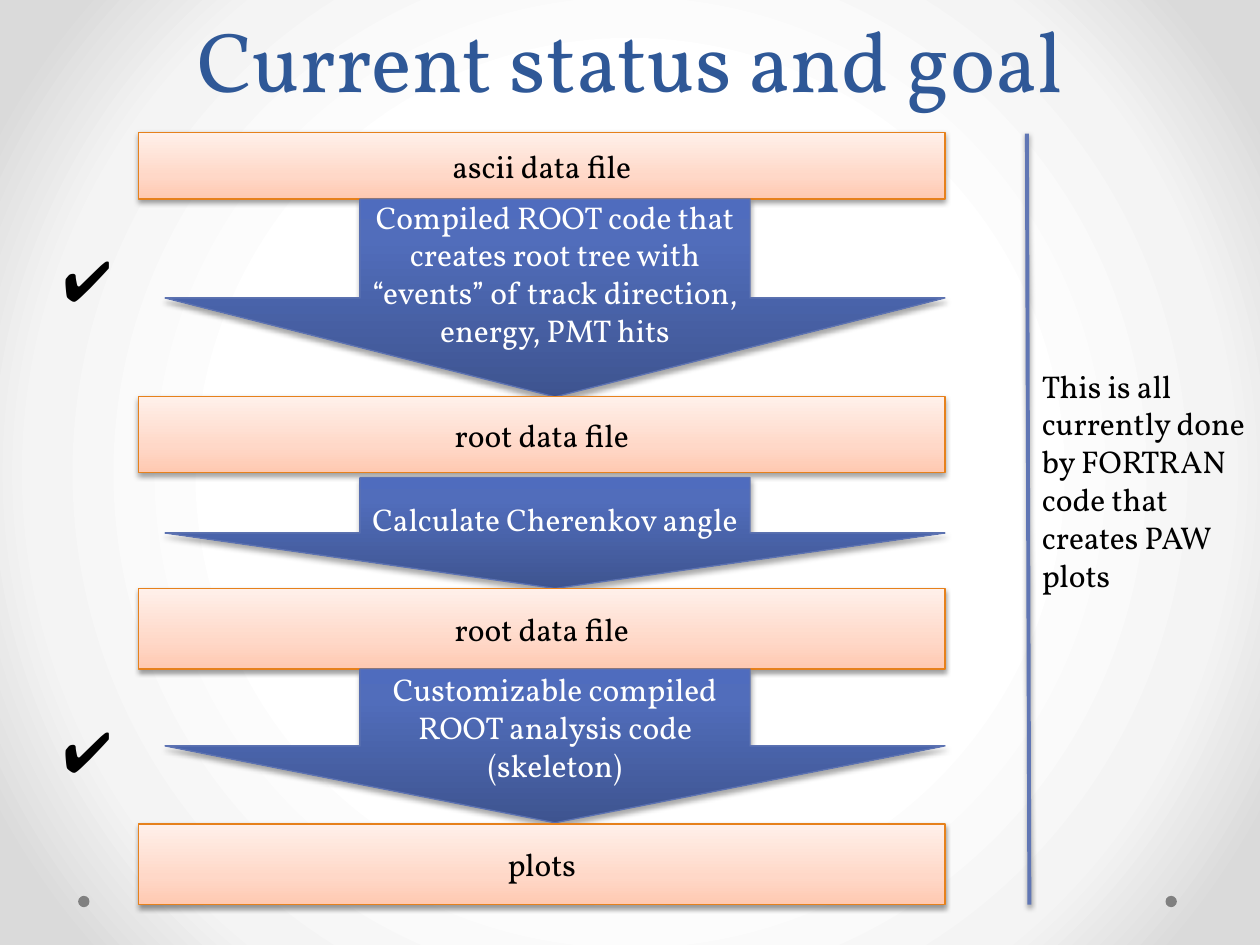
"""Build the slide on the current status and goal of the data analysis chain."""
from pptx import Presentation
from pptx import oxml
from pptx import util as u
from pptx.dml.color import RGBColor
from pptx.enum import shapes, text
from pptx.oxml.ns import nsdecls

FONT = "Vollkorn"
TITLE = "Current status and goal"
FILES = [
    ("ascii data file", 1.05, 0.53),
    ("root data file", 3.15, 0.6),
    ("root data file", 4.67, 0.64),
    ("plots", 6.54, 0.64),
]
STEPS = [
    ("Compiled ROOT code that creates root tree with “events” of track direction, energy, PMT hits", 1.58, 1.57),
    ("Calculate Cherenkov angle", 3.79, 0.88),
    ("Customizable compiled ROOT analysis code (skeleton)", 5.31, 1.22),
]
CHECK_TOPS = [1.9, 5.64]
REMARK = "This is all currently done by FORTRAN code that creates PAW plots"
DOT_LEFTS = [0.62, 9.25]
BACKGROUND = [(50, "FFFFFF"), (76, "F4F4F4"), (92, "DADADA")]
FILE_STYLE = {
    "kind": shapes.MSO_SHAPE.RECTANGLE, "left": 1.1, "width": 6.4, "margin": 0.1,
    "stops": [(0, "FFC9B1"), (35, "FFD8C8"), (100, "FFF0EA")],
    "line": "E6811C", "color": "000000", "shadow": (38, 1.6),
}
STEP_STYLE = {
    "kind": shapes.MSO_SHAPE.DOWN_ARROW, "left": 1.31, "width": 6.19, "margin": 0.08,
    "stops": [(0, "3E5490"), (80, "516DBB"), (100, "4F6CBE")],
    "line": "5C72B2", "color": "FFFFFF", "shadow": (35, 1.8),
}


def paint(color_format, value):
    color_format.rgb = RGBColor.from_string(value)


def box(left, top, width, height):
    return [u.Inches(length) for length in (left, top, width, height)]


def gradient(stops, direction):
    marks = "".join(
        f'<a:gs pos="{position * 1000}"><a:srgbClr val="{color}"/></a:gs>' for position, color in stops
    )
    return f'<a:gradFill {nsdecls("a")} rotWithShape="1"><a:gsLst>{marks}</a:gsLst>{direction}</a:gradFill>'


def set_background(slide):
    direction = '<a:path path="circle"><a:fillToRect l="50000" t="50000" r="50000" b="50000"/></a:path>'
    fill = gradient(BACKGROUND, direction)
    slide.element.cSld.insert(0, oxml.parse_xml(
        f'<p:bg {nsdecls("p", "a")}><p:bgPr>{fill}<a:effectLst/></p:bgPr></p:bg>'))


def add_shadow(shape, opacity, distance):
    shape._element.spPr.append(oxml.parse_xml(
        f'<a:effectLst {nsdecls("a")}><a:outerShdw blurRad="{u.Pt(3.1)}" dist="{u.Pt(distance)}" '
        f'dir="5400000" rotWithShape="0"><a:srgbClr val="000000"><a:alpha val="{opacity * 1000}"/>'
        f'</a:srgbClr></a:outerShdw></a:effectLst>'))


def write(shape, words, size, color, align, anchor, font=FONT):
    frame = shape.text_frame
    frame.text = words
    frame.word_wrap = True
    frame.vertical_anchor = anchor
    paragraph = frame.paragraphs[0]
    paragraph.alignment = align
    run = paragraph.runs[0]
    run.font.name = font
    run.font.size = u.Pt(size)
    paint(run.font.color, color)
    return paragraph


def add_stage(slide, words, top, height, style):
    shape = slide.shapes.add_shape(style["kind"], *box(style["left"], top, style["width"], height))
    paint_line(shape.line, style["line"], 0.75)
    fill = gradient(style["stops"], '<a:lin ang="16200000" scaled="0"/>')
    shape._element.spPr.prstGeom.addnext(oxml.parse_xml(fill))
    add_shadow(shape, *style["shadow"])
    write(shape, words, 18, style["color"], text.PP_ALIGN.CENTER, text.MSO_ANCHOR.MIDDLE)
    shape.text_frame.margin_left = shape.text_frame.margin_right = u.Inches(style["margin"])


def paint_line(line, color, width):
    line.fill.solid()
    paint(line.fill.fore_color, color)
    line.width = u.Pt(width)


def add_label(slide, words, place, size, font=FONT):
    label = slide.shapes.add_textbox(*box(*place))
    write(label, words, size, "000000", text.PP_ALIGN.LEFT, text.MSO_ANCHOR.TOP, font)
    label.text_frame.auto_size = text.MSO_AUTO_SIZE.SHAPE_TO_FIT_TEXT


def main():
    presentation = Presentation()
    presentation.slide_width, presentation.slide_height = u.Inches(10), u.Inches(7.5)
    slide = presentation.slides.add_slide(presentation.slide_layouts[5])
    set_background(slide)

    title = slide.shapes.title
    title.left, title.top, title.width, title.height = box(0.5, 0.16, 9, 0.76)
    paragraph = write(title, TITLE, 48.6, "2F5897", text.PP_ALIGN.CENTER, text.MSO_ANCHOR.BOTTOM)
    paragraph.line_spacing = u.Pt(58)
    title.text_frame.auto_size = text.MSO_AUTO_SIZE.NONE

    for left in DOT_LEFTS:
        dot = slide.shapes.add_shape(shapes.MSO_SHAPE.OVAL, *box(left, 7.11, 0.09, 0.09))
        dot.shadow.inherit = False
        dot.fill.solid()
        paint(dot.fill.fore_color, "808080")
        dot.line.fill.background()

    for index, data_file in enumerate(FILES):
        add_stage(slide, *data_file, FILE_STYLE)
        if index < len(STEPS):
            add_stage(slide, *STEPS[index], STEP_STYLE)

    for top in CHECK_TOPS:
        add_label(slide, "✔", (0.4, top, 0.69, 0.64), 32, "Arial")

    divider = slide.shapes.add_connector(shapes.MSO_CONNECTOR.STRAIGHT, *box(8.15, 1.06, 8.17, 7.18))
    paint_line(divider.line, "6076B4", 2.25)
    add_shadow(divider, 38, 1.6)
    add_label(slide, REMARK, (8.17, 2.86, 1.83, 1.92), 18)

    presentation.save("out.pptx")


if __name__ == "__main__":
    main()
